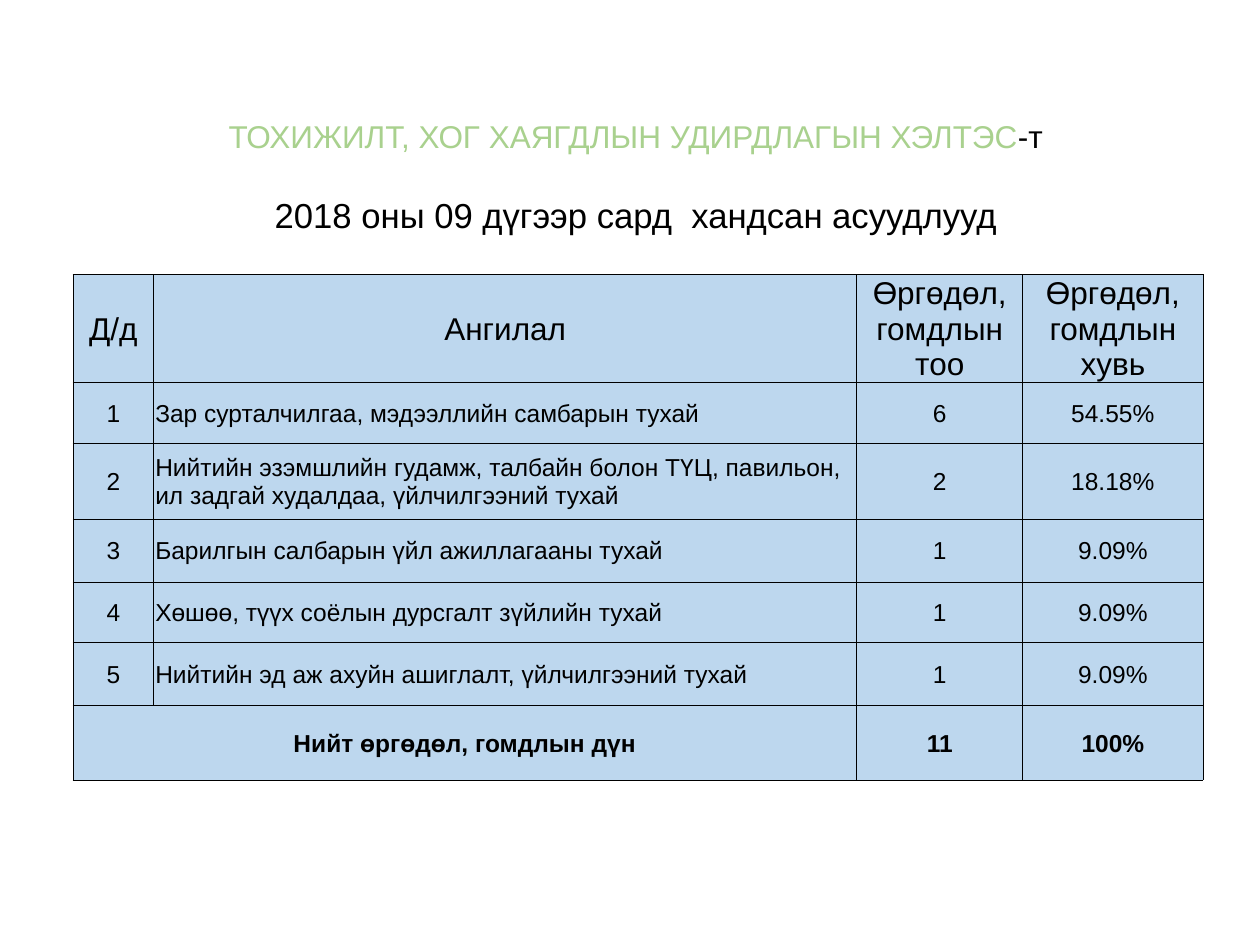
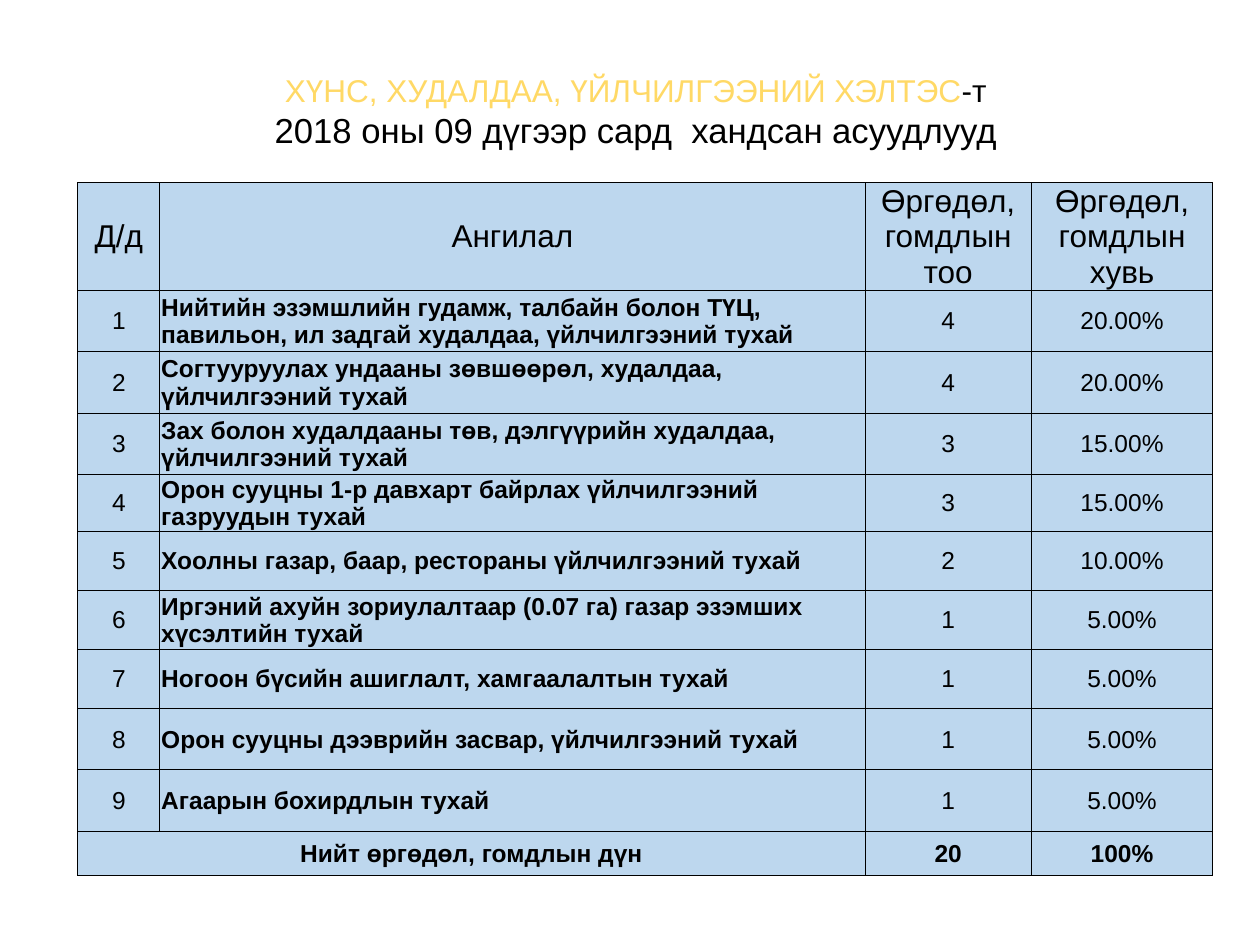
"""Build two slides of citizen complaints by department, each a title over a table."""
from dataclasses import dataclass

from lxml.etree import SubElement
from pptx import Presentation
from pptx.dml.color import RGBColor
from pptx.enum.text import MSO_ANCHOR, MSO_AUTO_SIZE, PP_ALIGN
from pptx.oxml.ns import qn
from pptx.util import Cm, Pt


@dataclass(frozen=True)
class Theme:
    font: str = "Arial"
    ink: str = "000000"
    fill: str = "BDD7EE"
    green: str = "A9D18E"
    gold: str = "FFD966"
    head: float = 18
    date: float = 19.8
    body: float = 14
    rule: float = 0.5


theme = Theme()


def write(para, text, size=theme.body, color=theme.ink, bold=False, align=PP_ALIGN.CENTER):
    para.alignment = align
    run = para.add_run()
    run.text = text
    run.font.name = theme.font
    run.font.size = Pt(size)
    run.font.bold = bold
    run.font.color.rgb = RGBColor.from_string(color)


def frame(cell):
    props = cell._tc.get_or_add_tcPr()
    for side in ("a:lnL", "a:lnR", "a:lnT", "a:lnB"):
        line = SubElement(props, qn(side), w=str(Pt(theme.rule)))
        paint = SubElement(line, qn("a:solidFill"))
        SubElement(paint, qn("a:srgbClr"), val=theme.ink)
    cell.fill.solid()
    cell.fill.fore_color.rgb = RGBColor.from_string(theme.fill)
    cell.vertical_anchor = MSO_ANCHOR.MIDDLE
    cell.margin_left = cell.margin_right = cell.margin_top = Cm(0.03)
    cell.margin_bottom = 0


heads = ["Д/д", "Ангилал", "Өргөдөл, гомдлын тоо", "Өргөдөл, гомдлын хувь"]
pages = [
    dict(
        name="ТОХИЖИЛТ, ХОГ ХАЯГДЛЫН УДИРДЛАГЫН ХЭЛТЭС",
        color=theme.green, top=2.77, gap=22.3, bold=False,
        place=(1.47, 5.54),
        cols=[1.63, 14.17, 3.35, 3.63],
        rows=[2.08, 1.24, 1.52, 1.27, 1.22, 1.27, 1.5],
        items=[
            ("Зар сурталчилгаа, мэдээллийн самбарын тухай", 6),
            ("Нийтийн эзэмшлийн гудамж, талбайн болон ТҮЦ, павильон, "
             "ил задгай худалдаа, үйлчилгээний тухай", 2),
            ("Барилгын салбарын үйл ажиллагааны тухай", 1),
            ("Хөшөө, түүх соёлын дурсгалт зүйлийн тухай", 1),
            ("Нийтийн эд аж ахуйн ашиглалт, үйлчилгээний тухай", 1),
        ],
    ),
    dict(
        name="ХҮНС, ХУДАЛДАА, ҮЙЛЧИЛГЭЭНИЙ ХЭЛТЭС",
        color=theme.gold, top=1.45, gap=0, bold=True,
        place=(1.57, 3.68),
        cols=[1.65, 14.22, 3.35, 3.66],
        rows=[1.68] + [1.24] * 3 + [0.89] + [1.19] * 3 + [1.24] * 2 + [0.89],
        items=[
            ("Нийтийн эзэмшлийн гудамж, талбайн болон ТҮЦ, павильон, "
             "ил задгай худалдаа, үйлчилгээний тухай", 4),
            ("Согтууруулах ундааны зөвшөөрөл, худалдаа, үйлчилгээний тухай", 4),
            ("Зах болон худалдааны төв, дэлгүүрийн худалдаа, үйлчилгээний тухай", 3),
            ("Орон сууцны 1-р давхарт байрлах үйлчилгээний газруудын тухай", 3),
            ("Хоолны газар, баар, рестораны үйлчилгээний тухай", 2),
            ("Иргэний ахуйн зориулалтаар (0.07 га) газар эзэмших хүсэлтийн тухай", 1),
            ("Ногоон бүсийн ашиглалт, хамгаалалтын тухай", 1),
            ("Орон сууцны дээврийн засвар, үйлчилгээний тухай", 1),
            ("Агаарын бохирдлын тухай", 1),
        ],
    ),
]

deck = Presentation()
deck.slide_width, deck.slide_height = Cm(25.4), Cm(19.05)

for page in pages:
    slide = deck.slides.add_slide(deck.slide_layouts[5])

    title = slide.shapes.title
    title.left, title.top = Cm(2.06), Cm(page["top"])
    title.width, title.height = Cm(21.51), Cm(1.65)
    box = title.text_frame
    box.word_wrap = True
    box.auto_size = MSO_AUTO_SIZE.NONE
    box.vertical_anchor = MSO_ANCHOR.MIDDLE
    box.margin_top, box.margin_bottom = 0, Cm(0.1)
    first, second = box.paragraphs[0], box.add_paragraph()
    write(first, page["name"], size=theme.head, color=page["color"])
    write(first, "-т", size=theme.head)
    write(second, "2018 оны 09 дүгээр сард  хандсан асуудлууд", size=theme.date)
    second.space_before = Pt(page["gap"])

    cols, rows, items = page["cols"], page["rows"], page["items"]
    left, top = page["place"]
    table = slide.shapes.add_table(
        len(rows), len(cols), Cm(left), Cm(top), Cm(sum(cols)), Cm(sum(rows))
    ).table
    table.first_row = table.horz_banding = False
    for col, width in zip(table.columns, cols):
        col.width = Cm(width)
    for row, height in zip(table.rows, rows):
        row.height = Cm(height)

    total = sum(count for label, count in items)
    lines = [heads]
    for rank, (label, count) in enumerate(items, 1):
        lines.append([str(rank), label, str(count), f"{count / total:.2%}"])
    lines.append(["Нийт өргөдөл, гомдлын дүн", "", str(total), "100%"])

    last = len(lines) - 1
    table.cell(last, 0).merge(table.cell(last, 1))
    for y, line in enumerate(lines):
        for x, text in enumerate(line):
            cell = table.cell(y, x)
            frame(cell)
            if cell.is_spanned:
                continue
            label = x == 1 and 0 < y < last
            write(
                cell.text_frame.paragraphs[0], text,
                size=theme.body if y else theme.head,
                bold=y == last or (label and page["bold"]),
                align=PP_ALIGN.LEFT if label else PP_ALIGN.CENTER,
            )

deck.save("out.pptx")
